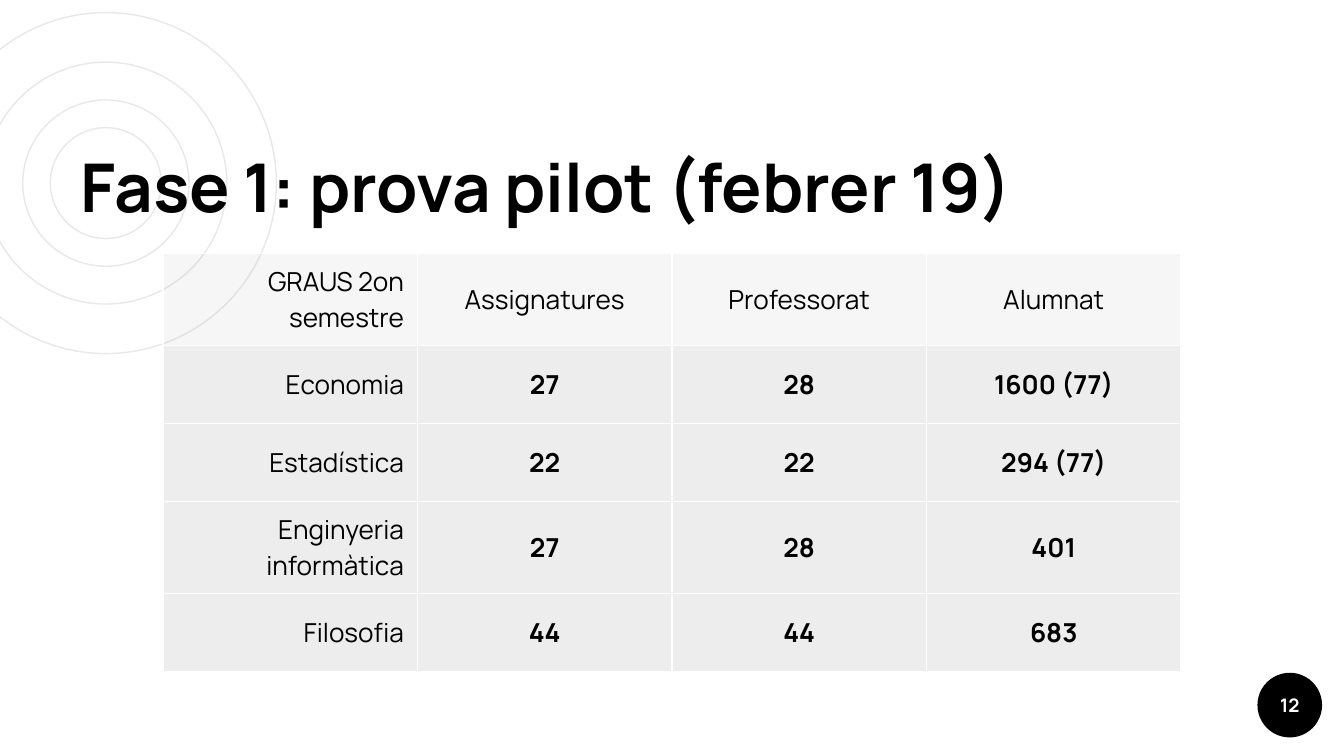
import pptx
import pptx.util
import pptx.oxml
import pptx.oxml.ns
import pptx.dml.color
import pptx.enum.text
import pptx.enum.shapes
from dataclasses import dataclass


@dataclass
class Theme:
    font: str = "Manrope"
    ink: str = "000000"
    paper: str = "FFFFFF"
    ring: str = "E8E8E8"
    head: str = "808080"
    alpha: int = 7000
    title: int = 36
    body: int = 14
    page: int = 10


theme = Theme()
PX = 5715
Pt = pptx.util.Pt
Align = pptx.enum.text.PP_ALIGN
Anchor = pptx.enum.text.MSO_ANCHOR
oval = pptx.enum.shapes.MSO_SHAPE.OVAL
rgb = pptx.dml.color.RGBColor.from_string


def style(frame, text, size, color, bold, align):
    frame.text = text
    frame.word_wrap = True
    para = frame.paragraphs[0]
    para.alignment = align
    font = para.runs[0].font
    font.name = theme.font
    font.size = Pt(size)
    font.bold = bold
    font.color.rgb = rgb(color)


def paint(cell, color):
    cell.fill.solid()
    cell.fill.fore_color.rgb = rgb(color)
    props = cell._tc.get_or_add_tcPr()
    space = pptx.oxml.ns.nsdecls("a")
    tint = props.find(".//" + pptx.oxml.ns.qn("a:srgbClr"))
    tint.append(pptx.oxml.parse_xml(f'<a:alpha {space} val="{theme.alpha}"/>'))
    for spot, side in enumerate("LRTB"):
        edge = (f'<a:ln{side} {space} w="9525"><a:solidFill>'
                f'<a:srgbClr val="{theme.paper}"/></a:solidFill></a:ln{side}>')
        props.insert(spot, pptx.oxml.parse_xml(edge))


deck = pptx.Presentation()
deck.slide_width = 1600 * PX
deck.slide_height = 900 * PX
slide = deck.slides.add_slide(deck.slide_layouts[5])
shapes = slide.shapes
slide.background.fill.solid()
slide.background.fill.fore_color.rgb = rgb(theme.paper)

for size in (406, 198, 288, 132):
    left, top = 126 - size // 2, 218 - size // 2
    ring = shapes.add_shape(oval, left * PX, top * PX, size * PX, size * PX)
    ring.shadow.inherit = False
    ring.fill.background()
    ring.line.color.rgb = rgb(theme.ring)
    ring.line.width = Pt(0.75)

badge = [n * PX for n in (1497, 801, 77, 77)]
disc = shapes.add_shape(oval, *badge)
disc.shadow.inherit = False
disc.fill.solid()
disc.fill.fore_color.rgb = rgb(theme.ink)
disc.line.fill.background()

title = shapes.title
title.element.getparent().append(title.element)
title.left, title.top, title.width, title.height = [
    n * PX for n in (80, 165, 1213, 120)]
style(title.text_frame, "Fase 1: prova pilot (febrer 19)",
      theme.title, theme.ink, True, Align.LEFT)

page = shapes.add_textbox(*badge)
style(page.text_frame, "12", theme.page, theme.paper, True, Align.CENTER)

for frame, anchor in ((title.text_frame, Anchor.BOTTOM),
                      (page.text_frame, Anchor.MIDDLE)):
    frame.auto_size = pptx.enum.text.MSO_AUTO_SIZE.NONE
    frame.vertical_anchor = anchor
    frame.margin_left = frame.margin_right = 16 * PX
    frame.margin_top = frame.margin_bottom = 16 * PX

data = [
    ("GRAUS 2on semestre", "Assignatures", "Professorat", "Alumnat"),
    ("Economia", "27", "28", "1600 (77)"),
    ("Estadística", "22", "22", "294 (77)"),
    ("Enginyeria informàtica", "27", "28", "401"),
    ("Filosofia", "44", "44", "683"),
]
grid = shapes.add_table(len(data), len(data[0]), 194 * PX, 302 * PX,
                        1212 * PX, 93 * len(data) * PX).table
grid.first_row = False
grid.horz_banding = False
for r, row in enumerate(data):
    for c, text in enumerate(row):
        cell = grid.cell(r, c)
        style(cell.text_frame, text, theme.body, theme.ink, r > 0 and c > 0,
              Align.CENTER if c else Align.RIGHT)
        cell.vertical_anchor = Anchor.MIDDLE
        cell.margin_left = cell.margin_right = 16 * PX
        cell.margin_top = cell.margin_bottom = 12 * PX
        paint(cell, theme.ink if r else theme.head)

deck.save("out.pptx")
